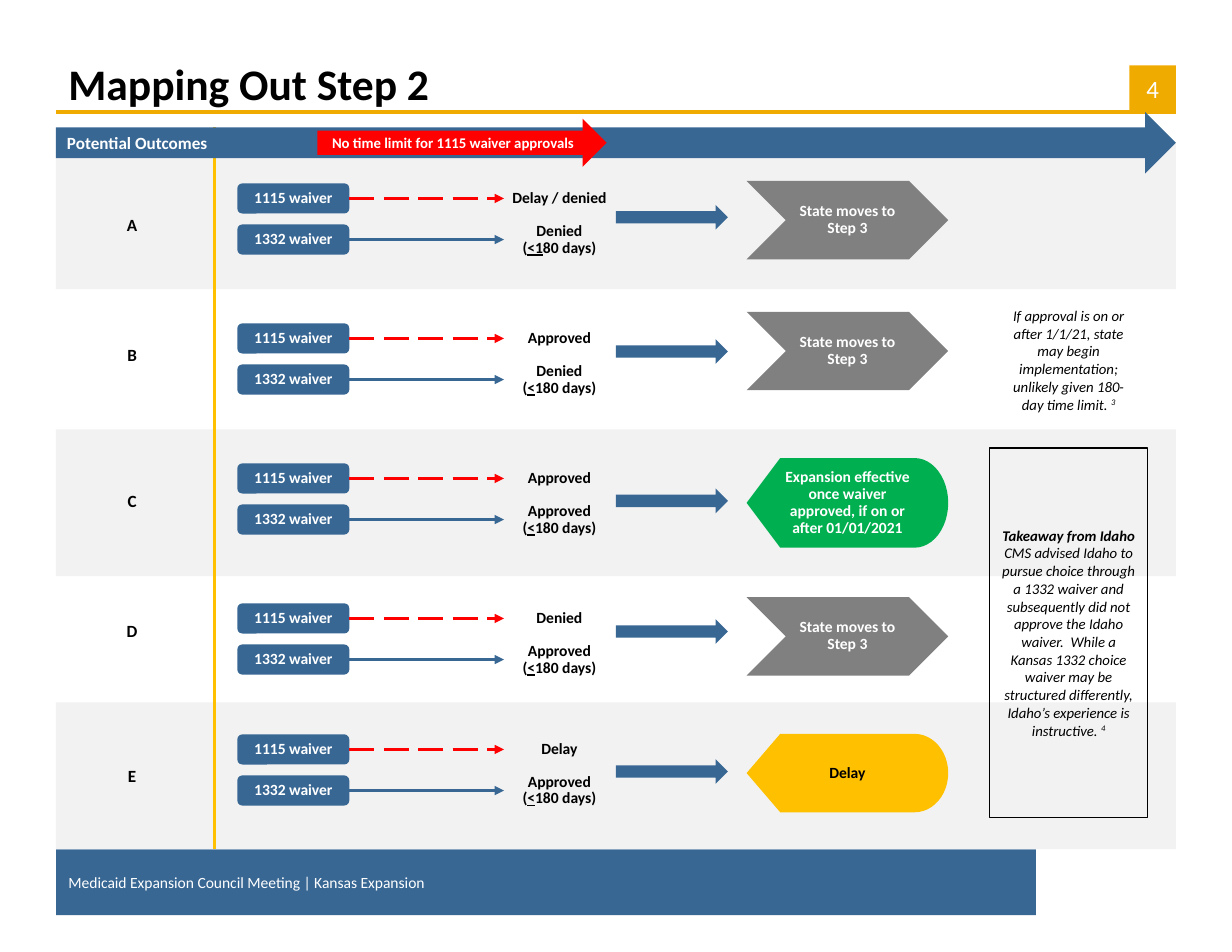
import lxml.etree
import pptx
import pptx.dml.color
import pptx.enum.dml
import pptx.enum.shapes
import pptx.enum.text
import pptx.oxml.ns
import pptx.util

Pt = pptx.util.Pt
qn = pptx.oxml.ns.qn
Shape = pptx.enum.shapes.MSO_SHAPE
Align = pptx.enum.text.PP_ALIGN
Anchor = pptx.enum.text.MSO_ANCHOR

COLORS = {
    "blue": "386794", "gold": "F0AB00", "amber": "FFC000", "red": "FF0000",
    "green": "00B050", "gray": "808080", "band": "F2F2F2",
    "black": "000000", "white": "FFFFFF",
}
LEFT, WIDTH = 36, 720
BOX_LEFT, BOX_WIDTH, BOX_HEIGHT = 152.6, 72, 19.4
WAIVER_GAP = 26.4
OUTCOME_CENTER = 359.6

STEP_3 = (Shape.CHEVRON, "gray", "white", "State moves to Step 3", 50.4)
EFFECTIVE = (Shape.FLOWCHART_DISPLAY, "green", "white",
             "Expansion effective once waiver approved, if on or after 01/01/2021", 57.6)
DELAY = (Shape.FLOWCHART_DISPLAY, "amber", "black", "Delay", 50.4)

# letter, its centre, centre of the 1115 box, 1115 outcome, 1332 outcome,
# underlined part, rest, centre of the block arrow, result, centre of the result
ROWS = [
    ("A", 144.4, 127.6, "Delay / denied", "Denied (", "<1", "80 days)", 139.7, STEP_3, 141.5),
    ("B", 228.2, 217.6, "Approved", "Denied (", "<", "180 days)", 226.0, STEP_3, 225.7),
    ("C", 322.0, 307.6, "Approved", "Approved (", "<", "180 days)", 322.0, EFFECTIVE, 323.3),
    ("D", 405.7, 397.6, "Denied", "Approved (", "<", "180 days)", 406.0, STEP_3, 409.1),
    ("E", 498.6, 481.8, "Delay", "Approved (", "<", "180 days)", 496.0, DELAY, 497.0),
]


def rgb(name):
    return pptx.dml.color.RGBColor.from_string(COLORS[name])


def write(shape, text, size=10, color="black", bold=False, italic=False, align=Align.CENTER,
          anchor=Anchor.MIDDLE, margins=(0, 0, 0, 0), spacing=None, wrap=True):
    """Fill a shape; text is a string or a list of paragraphs of (text, format) runs."""
    frame = shape.text_frame
    frame.auto_size = pptx.enum.text.MSO_AUTO_SIZE.NONE
    frame.word_wrap = wrap
    frame.vertical_anchor = anchor
    (frame.margin_left, frame.margin_top,
     frame.margin_right, frame.margin_bottom) = map(Pt, margins)
    paragraphs = [[(text, {})]] if isinstance(text, str) else text
    for index, runs in enumerate(paragraphs):
        paragraph = frame.add_paragraph() if index else frame.paragraphs[0]
        paragraph.alignment = align
        if spacing:
            paragraph.line_spacing = spacing
        for words, extra in runs:
            run = paragraph.add_run()
            run.text = words
            font = run.font
            font.name, font.size = "Calibri", Pt(size)
            font.color.rgb = rgb(color)
            font.bold = extra.get("bold", bold)
            font.italic = italic
            if extra.get("underline"):
                font.underline = True
            if extra.get("superscript"):
                run._r.get_or_add_rPr().set("baseline", "30000")


class Deck:
    def __init__(self):
        self.presentation = pptx.Presentation()
        self.presentation.slide_width = Pt(792)
        self.presentation.slide_height = Pt(612)
        self.slide = self.presentation.slides.add_slide(self.presentation.slide_layouts[5])

    def title(self, text, left, top, width, height):
        shape = self.slide.shapes.title
        shape.left, shape.top, shape.width, shape.height = map(Pt, (left, top, width, height))
        write(shape, text, size=28, bold=True, align=Align.LEFT, anchor=Anchor.BOTTOM,
              margins=(8, 4, 8, 4))

    def shape(self, kind, left, top, width, height, fill=None, line=None, text=None, **style):
        shape = self.slide.shapes.add_shape(kind, *map(Pt, (left, top, width, height)))
        shape.shadow.inherit = False
        if fill:
            shape.fill.solid()
            shape.fill.fore_color.rgb = rgb(fill)
        else:
            shape.fill.background()
        if line:
            shape.line.color.rgb = rgb(line)
            shape.line.width = Pt(0.75)
        else:
            shape.line.fill.background()
        if text:
            write(shape, text, **style)
        return shape

    def label(self, text, left, top, width, height, **style):
        box = self.slide.shapes.add_textbox(*map(Pt, (left, top, width, height)))
        write(box, text, **style)

    def line(self, start, end, color, arrow=False, dashed=False, source=None):
        connector = self.slide.shapes.add_connector(
            pptx.enum.shapes.MSO_CONNECTOR.STRAIGHT, *map(Pt, (*start, *end)))
        if source is not None:
            connector.begin_connect(source, 3)
        connector.line.color.rgb = rgb(color)
        connector.line.width = Pt(2)
        if dashed:
            connector.line.dash_style = pptx.enum.dml.MSO_LINE.LONG_DASH
        if arrow:
            lxml.etree.SubElement(connector.line._get_or_add_ln(), qn("a:tailEnd"),
                                  type="triangle")
        lxml.etree.SubElement(connector._element.spPr, qn("a:effectLst"))

    def waiver(self, name, center, outcome, outcome_width, color, dashed):
        """Draw a waiver box, its arrow and the outcome it leads to."""
        box = self.shape(Shape.ROUNDED_RECTANGLE, BOX_LEFT, center - BOX_HEIGHT / 2,
                         BOX_WIDTH, BOX_HEIGHT, "blue", text=name, color="white",
                         bold=True, spacing=0.9)
        self.line((BOX_LEFT + BOX_WIDTH, center), (324, center), color,
                  arrow=True, dashed=dashed, source=box)
        self.label(outcome, OUTCOME_CENTER - outcome_width / 2, center - 11.5,
                   outcome_width, 23, bold=True, spacing=0.9, margins=(0.7,) * 4)

    def row(self, letter, letter_center, center, first, second, limit, rest,
            arrow_center, result, result_center):
        self.label(letter, 55.4, letter_center - 10.4, 59, 20.8, size=11, bold=True)
        self.waiver("1115 waiver", center, first, 72, "red", True)
        self.waiver("1332 waiver", center + WAIVER_GAP,
                    [[(second, {}), (limit, {"underline": True}), (rest, {})]],
                    51.2, "blue", False)
        self.shape(Shape.RIGHT_ARROW, 396, arrow_center - 8, 72, 16, "blue")
        kind, fill, color, text, height = result
        self.shape(kind, 480, result_center - height / 2, 129.6, height, fill,
                   text=text, color=color, bold=True, spacing=0.9, margins=(0.7,) * 4)


def main():
    deck = Deck()
    deck.shape(Shape.RECTANGLE, LEFT, 546, 630, 42.3, "blue",
               text="Medicaid Expansion Council Meeting | Kansas Expansion", color="white",
               align=Align.LEFT, margins=(8, 0, 0, 0))
    deck.line((LEFT, 72), (LEFT + WIDTH, 72), "gold")
    deck.shape(Shape.RECTANGLE, 726, 42, 30, 30, "gold", text="4", size=16,
               color="white", wrap=False)
    for top in (91.5, 276, 451.5):
        deck.shape(Shape.RECTANGLE, LEFT, top, WIDTH, 94.4, "band")
    deck.title("Mapping Out Step 2", LEFT, 32.4, 690, 41.8)
    deck.line((138, 81.5), (138, 546), "amber")

    for row in ROWS:
        deck.row(*row)

    deck.shape(Shape.RIGHT_ARROW, LEFT, 72, WIDTH, 39.6, "blue", text="Potential Outcomes",
               size=11, color="white", bold=True, align=Align.LEFT, margins=(7.2, 0, 0, 0))
    deck.shape(Shape.RIGHT_ARROW, 204, 76.3, 186, 31, "red",
               text="No time limit for 1115 waiver approvals", size=9.5, color="white",
               bold=True, margins=(7.2, 0, 10.8, 0))
    deck.label([[("If approval is on or after 1/1/21, state may begin implementation; "
                  "unlikely given 180-day time limit. ", {}), ("3", {"superscript": True})]],
               642, 193.7, 90, 76.3, size=9.5, italic=True, anchor=Anchor.TOP,
               margins=(7.2, 3.6, 7.2, 3.6))
    deck.shape(Shape.RECTANGLE, 636, 288, 102, 237.6, line="black", text=[
        [("Takeaway from Idaho", {"bold": True})],
        [("CMS advised Idaho to pursue choice through a 1332 waiver and subsequently did not "
          "approve the Idaho waiver.  While a Kansas 1332 choice waiver may be structured "
          "differently, Idaho’s experience is instructive. ", {}),
         ("4", {"superscript": True})],
    ], size=9.5, italic=True, margins=(7.2, 3.6, 7.2, 3.6))
    deck.presentation.save("out.pptx")


if __name__ == "__main__":
    main()
